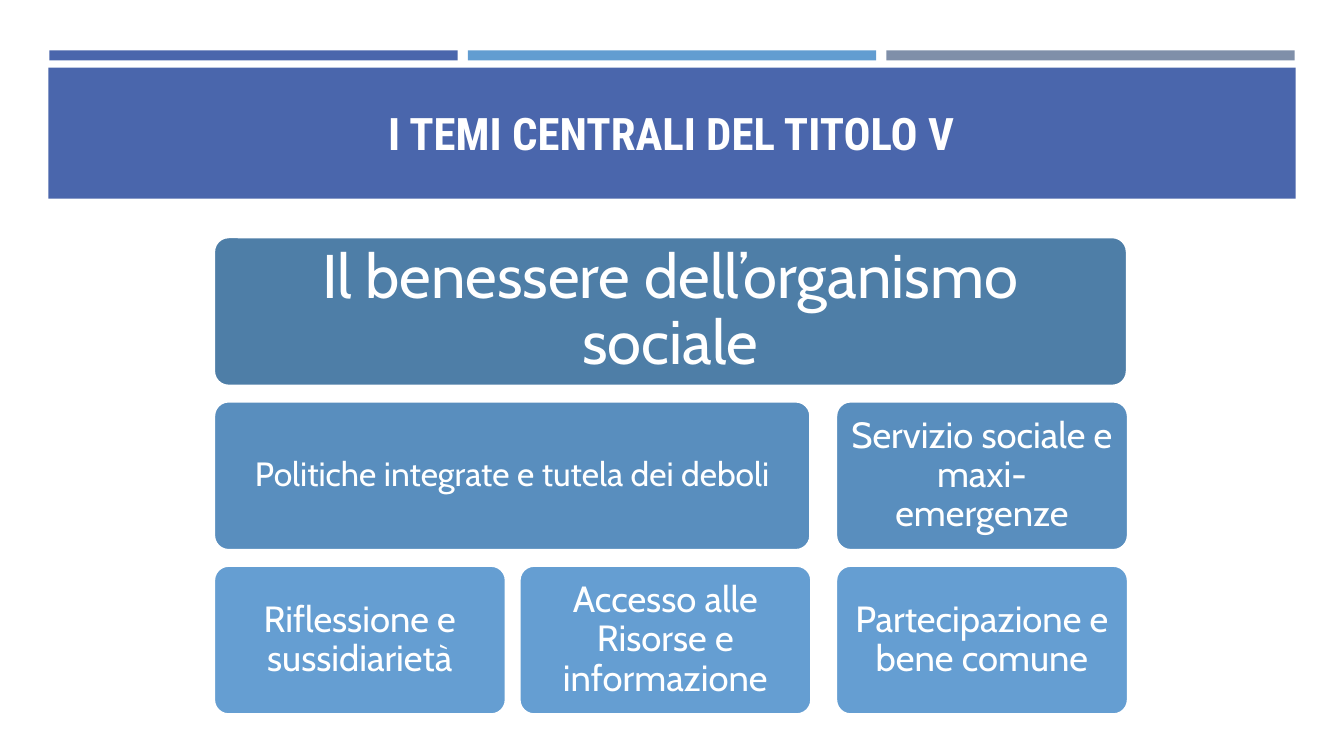
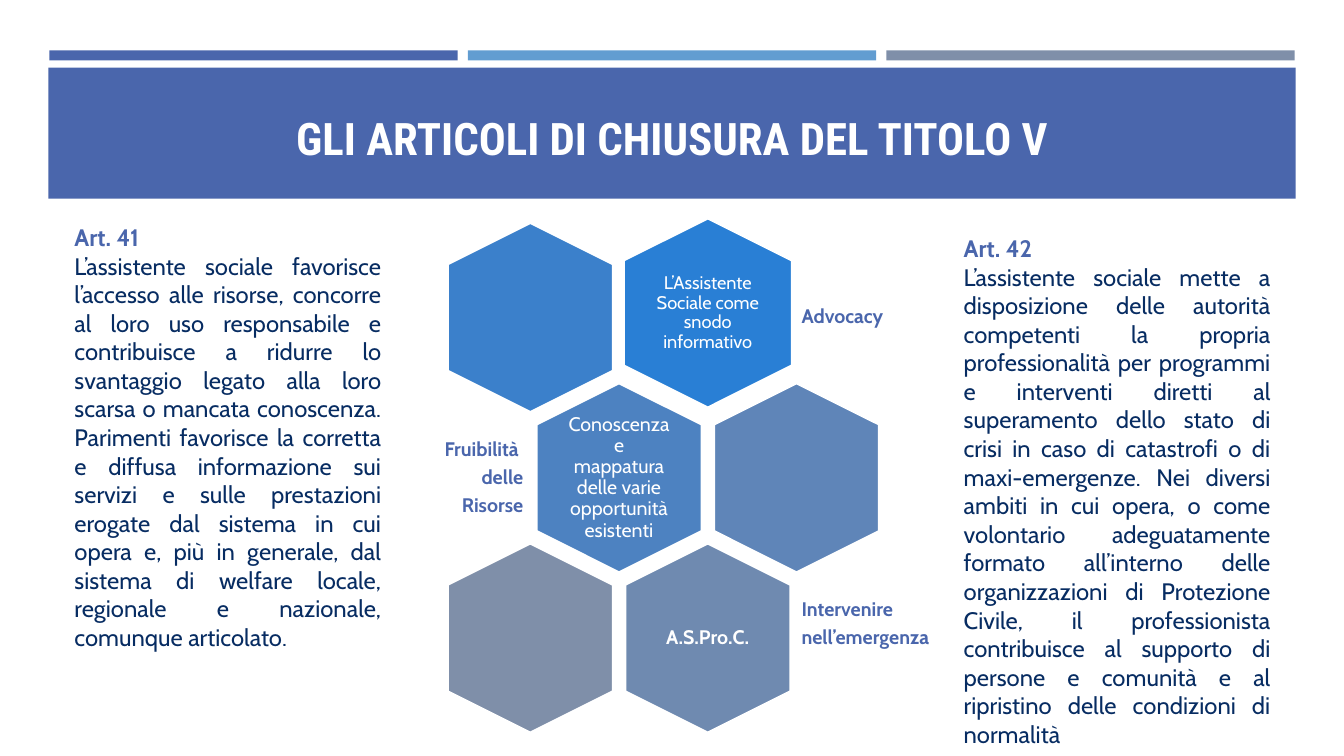
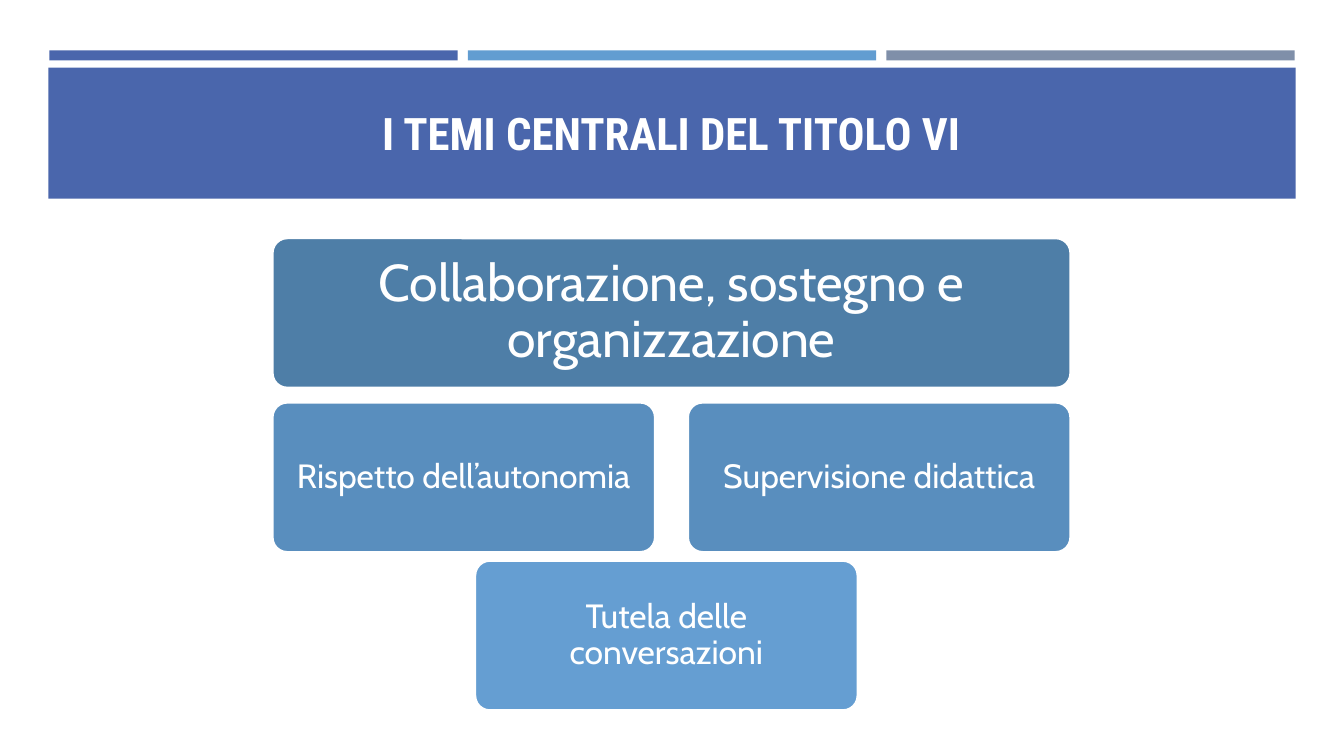
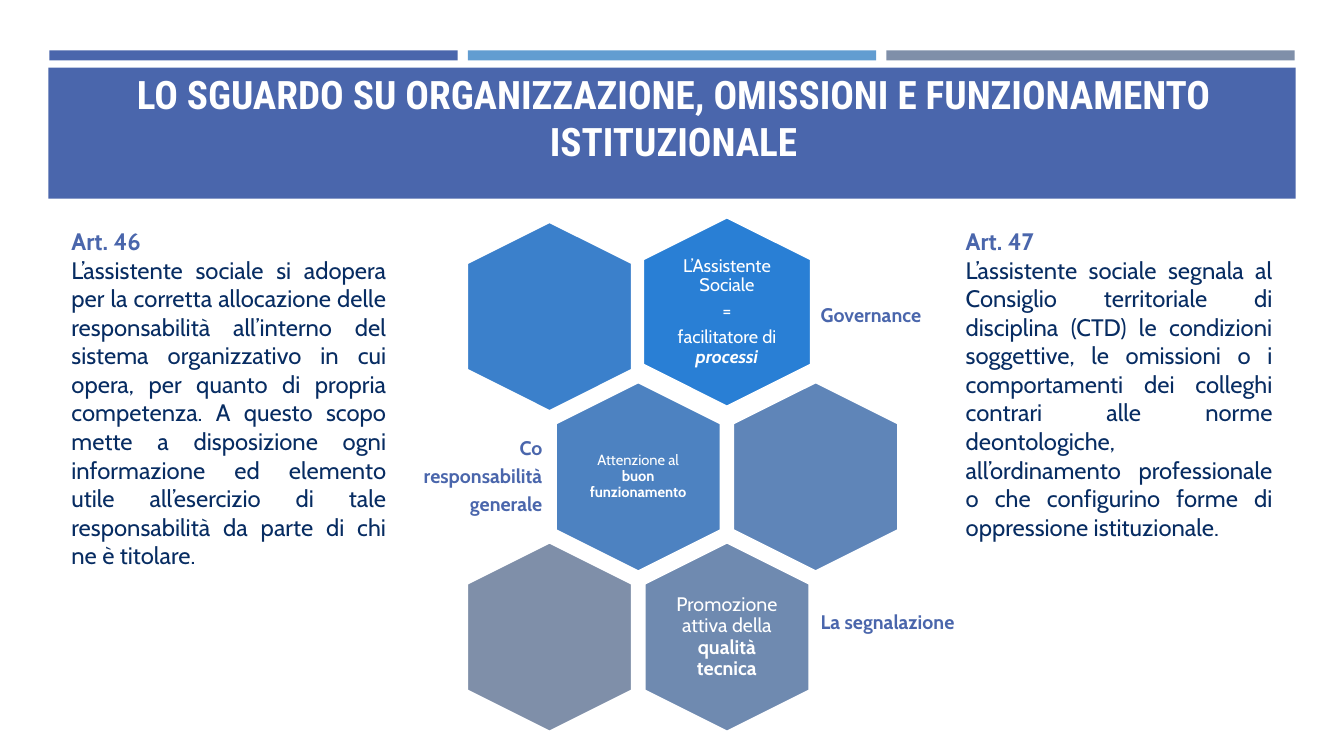
from pptx import Presentation
from pptx.dml.color import RGBColor
from pptx.enum.shapes import MSO_SHAPE
from pptx.enum.text import MSO_ANCHOR, MSO_AUTO_SIZE, PP_ALIGN
from pptx.util import Inches, Pt

RECTANGLE, ROUNDED, HEXAGON = MSO_SHAPE.RECTANGLE, MSO_SHAPE.ROUNDED_RECTANGLE, MSO_SHAPE.HEXAGON
LEFT, CENTER, RIGHT, JUSTIFY = PP_ALIGN.LEFT, PP_ALIGN.CENTER, PP_ALIGN.RIGHT, PP_ALIGN.JUSTIFY
TOP, MIDDLE, BOTTOM = MSO_ANCHOR.TOP, MSO_ANCHOR.MIDDLE, MSO_ANCHOR.BOTTOM
NO_AUTOFIT = MSO_AUTO_SIZE.NONE

WHITE = RGBColor(0xFF, 0xFF, 0xFF)
INDIGO = RGBColor(0x4A, 0x66, 0xAC)
SKY = RGBColor(0x62, 0x9D, 0xD1)
SLATE = RGBColor(0x7F, 0x8F, 0xA9)
NAVY = RGBColor(0x07, 0x2C, 0x62)
TILE_DARK = RGBColor(0x4E, 0x7E, 0xA7)
TILE_MEDIUM = RGBColor(0x59, 0x8E, 0xBE)
TILE_LIGHT = RGBColor(0x65, 0x9E, 0xD2)
HEXAGON_ACCENT = RGBColor(0x29, 0x7F, 0xD5)
HEXAGON_TOP = RGBColor(0x3B, 0x80, 0xCB)
HEXAGON_MIDDLE = RGBColor(0x4D, 0x82, 0xC1)
HEXAGON_SIDE = RGBColor(0x5F, 0x85, 0xB8)
HEXAGON_LOW = RGBColor(0x6F, 0x8A, 0xB0)

TITLE_FONT, BODY_FONT = "Roboto Condensed", "Cabin"
TITLE_ONLY_LAYOUT = 5
HEXAGON_LENGTH, HEXAGON_WIDTH, ACCENT_WIDTH = 1.88, 1.64, 1.67
COLUMN_STEP, ROW_STEP = 0.88, 1.59
CAPTION_HEIGHT = 1.13


class Deck:
    """Holds the style and the current slide, and adds each kind of element."""

    def __init__(self):
        self.presentation = Presentation()
        self.presentation.slide_width = Inches(13.33)
        self.presentation.slide_height = Inches(7.5)
        self.layout = self.presentation.slide_layouts[TITLE_ONLY_LAYOUT]
        self.slide = None

    def add_slide(self, title, left=0.63, top=0.86, width=12.06, height=0.77, size=32):
        self.slide = self.presentation.slides.add_slide(self.layout)
        if len(self.presentation.slides) == 1:
            self.add_bands()
        shape = self.slide.shapes.title
        shape.left, shape.top = Inches(left), Inches(top)
        shape.width, shape.height = Inches(width), Inches(height)
        frame = self.set_frame(shape, BOTTOM)
        self.add_paragraphs(frame, [title], size, WHITE, CENTER, bold=True, font=TITLE_FONT)

    def add_bands(self):
        for placeholder in list(self.layout.placeholders):
            if placeholder.placeholder_format.idx:
                self.layout.shapes.element.remove(placeholder.element)
        bands = [self.add_shape(RECTANGLE, 0.49 + 4.15 * column, 0.5, 4.05, 0.1, color)
                 for column, color in enumerate((INDIGO, SKY, SLATE))]
        bands.append(self.add_shape(RECTANGLE, 0.48, 0.67, 12.37, 1.3, INDIGO))
        for band in bands:
            self.layout.shapes.element.append(band.element)

    def add_shape(self, kind, left, top, width, height, fill, line_width=None):
        shape = self.slide.shapes.add_shape(
            kind, Inches(left), Inches(top), Inches(width), Inches(height))
        shape.shadow.inherit = False
        shape.fill.solid()
        shape.fill.fore_color.rgb = fill
        if line_width:
            shape.line.color.rgb = WHITE
            shape.line.width = Pt(line_width)
        else:
            shape.line.fill.background()
        return shape

    def set_frame(self, shape, anchor, inset=None):
        frame = shape.text_frame
        frame.word_wrap = True
        frame.auto_size = NO_AUTOFIT
        frame.vertical_anchor = anchor
        if inset is not None:
            frame.margin_left = frame.margin_right = Inches(inset)
            frame.margin_top = frame.margin_bottom = Inches(inset)
        return frame

    def add_paragraphs(self, frame, paragraphs, size, color, alignment,
                       bold=False, font=BODY_FONT, compact=False):
        for index, runs in enumerate(paragraphs):
            paragraph = frame.add_paragraph() if index else frame.paragraphs[0]
            paragraph.alignment = alignment
            if compact:
                paragraph.line_spacing = 0.9
                paragraph.space_after = Pt(round(0.35 * size, 1))
            for item in [runs] if isinstance(runs, str) else runs:
                text, style = (item, {}) if isinstance(item, str) else item
                run = paragraph.add_run()
                run.text = text
                run.font.name = font
                run.font.size = Pt(size)
                run.font.bold = style.get("bold", bold)
                run.font.italic = style.get("italic", False)
                run.font.color.rgb = style.get("color", color)

    def add_text(self, left, top, width, height, anchor=TOP, inset=None):
        shape = self.slide.shapes.add_textbox(
            Inches(left), Inches(top), Inches(width), Inches(height))
        return self.set_frame(shape, anchor, inset)

    def add_article(self, left, top, width, height, heading, text):
        frame = self.add_text(left, top, width, height)
        paragraphs = [[(heading, {"bold": True, "color": INDIGO})], text]
        self.add_paragraphs(frame, paragraphs, 17, NAVY, JUSTIFY)

    def add_tile(self, left, top, width, height, fill, text, size):
        shape = self.add_shape(ROUNDED, left, top, width, height, fill, 2)
        shape.adjustments[0] = 0.1
        frame = self.set_frame(shape, MIDDLE, round(size / 240, 2))
        self.add_paragraphs(frame, [text], size, WHITE, CENTER, compact=True)

    def add_hexagon(self, left, top, fill, width=HEXAGON_WIDTH, paragraphs=(), size=14):
        shape = self.add_shape(HEXAGON, left, top, HEXAGON_LENGTH, width, fill, 1.75)
        shape.rotation = 90
        if paragraphs:
            text_width, text_height = width - 0.51, 1.29
            frame = self.add_text(
                left + (HEXAGON_LENGTH - text_width) / 2, top + (width - text_height) / 2,
                text_width, text_height, MIDDLE, 0.05 if size < 14 else 0.06)
            self.add_paragraphs(frame, paragraphs, size, WHITE, CENTER, compact=True)

    def add_caption(self, left, center, width, paragraphs, alignment):
        frame = self.add_text(
            left, center - CAPTION_HEIGHT / 2, width, CAPTION_HEIGHT, MIDDLE, 0.06)
        self.add_paragraphs(frame, paragraphs, 14, INDIGO, alignment, bold=True, compact=True)

    def add_honeycomb(self, left, top, labels, captions):
        columns = [left + COLUMN_STEP * index for index in range(4)]
        rows = [top + ROW_STEP * index for index in range(3)]
        centers = [row + HEXAGON_WIDTH / 2 for row in rows]
        accent, middle, low = labels
        self.add_hexagon(columns[2], rows[0] - 0.06, HEXAGON_ACCENT, ACCENT_WIDTH, *accent)
        self.add_hexagon(columns[0], rows[0], HEXAGON_TOP)
        self.add_hexagon(columns[1], rows[1], HEXAGON_MIDDLE, HEXAGON_WIDTH, *middle)
        self.add_hexagon(columns[3], rows[1], HEXAGON_SIDE)
        self.add_hexagon(columns[2], rows[2], HEXAGON_LOW, HEXAGON_WIDTH, *low)
        self.add_hexagon(columns[0], rows[2], SLATE)
        self.add_caption(left + 3.57, centers[0], 2.1, captions[0], LEFT)
        self.add_caption(left - 1.1, centers[1], 2.03, captions[1], RIGHT)
        self.add_caption(left + 3.57, centers[2] - 0.14, 2.1, captions[2], LEFT)


def add_welfare_themes(deck):
    deck.add_slide("I TEMI CENTRALI DEL TITOLO V")
    first, second, third = 2.12, 5.15, 8.29
    tiles = [
        (first, 0, 9.06, TILE_DARK, "Il benessere dell’organismo sociale", 44),
        (first, 1, 5.92, TILE_MEDIUM, "Politiche integrate e tutela dei deboli", 24),
        (third, 1, 2.9, TILE_MEDIUM, "Servizio sociale e maxi-emergenze", 26),
        (first, 2, 2.9, TILE_LIGHT, "Riflessione e sussidiarietà", 26),
        (second, 2, 2.9, TILE_LIGHT, "Accesso alle Risorse e informazione", 26),
        (third, 2, 2.9, TILE_LIGHT, "Partecipazione e bene comune", 26),
    ]
    for left, row, width, fill, text, size in tiles:
        deck.add_tile(left, 2.35 + 1.63 * row, width, 1.48, fill, text, size)


def add_closing_articles(deck):
    deck.add_slide("GLI ARTICOLI DI CHIUSURA DEL TITOLO V", 0.64, 0.95, 12.06, 0.73)
    deck.add_article(
        0.64, 2.16, 3.24, 4.39, "Art. 41",
        "L’assistente sociale favorisce l’accesso alle risorse, concorre al loro uso "
        "responsabile e contribuisce a ridurre lo svantaggio legato alla loro scarsa o "
        "mancata conoscenza. Parimenti favorisce la corretta e diffusa informazione sui "
        "servizi e sulle prestazioni erogate dal sistema in cui opera e, più in generale, "
        "dal sistema di welfare locale, regionale e nazionale, comunque articolato.")
    deck.add_article(
        9.46, 2.27, 3.24, 4.96, "Art. 42",
        "L’assistente sociale mette a disposizione delle autorità competenti la propria "
        "professionalità per programmi e interventi diretti al superamento dello stato di "
        "crisi in caso di catastrofi o di maxi-emergenze. Nei diversi ambiti in cui opera, "
        "o come volontario adeguatamente formato all’interno delle organizzazioni di "
        "Protezione Civile, il professionista contribuisce al supporto di persone e "
        "comunità e al ripristino delle condizioni di normalità")
    labels = [
        (["L’Assistente Sociale come snodo informativo"], 13),
        (["Conoscenza e mappatura delle varie opportunità esistenti"], 14),
        ([[("A.S.Pro.C.", {"bold": True})]], 14),
    ]
    captions = [["Advocacy"], ["Fruibilità ", "delle", "Risorse"],
                ["Intervenire", "nell’emergenza"]]
    deck.add_honeycomb(4.32, 2.33, labels, captions)


def add_organisation_themes(deck):
    deck.add_slide("I TEMI CENTRALI DEL TITOLO VI")
    tiles = [
        (2.7, 2.36, 7.92, TILE_DARK, "Collaborazione, sostegno e organizzazione", 37),
        (2.7, 3.99, 3.8, TILE_MEDIUM, "Rispetto dell’autonomia", 24),
        (6.82, 3.99, 3.8, TILE_MEDIUM, "Supervisione didattica", 24),
        (4.71, 5.56, 3.8, TILE_LIGHT, "Tutela delle conversazioni", 24),
    ]
    for left, top, width, fill, text, size in tiles:
        deck.add_tile(left, top, width, 1.49, fill, text, size)


def add_institutional_articles(deck):
    deck.add_slide("LO SGUARDO SU ORGANIZZAZIONE, OMISSIONI E FUNZIONAMENTO ISTITUZIONALE",
                   0.35, 0.95, 12.66, 0.73, 28)
    deck.add_article(
        0.61, 2.2, 3.32, 3.53, "Art. 46",
        "L’assistente sociale si adopera per la corretta allocazione delle responsabilità "
        "all’interno del sistema organizzativo in cui opera, per quanto di propria "
        "competenza. A questo scopo mette a disposizione ogni informazione ed elemento "
        "utile all’esercizio di tale responsabilità da parte di chi ne è titolare.")
    deck.add_article(
        9.48, 2.2, 3.24, 3.25, "Art. 47",
        "L’assistente sociale segnala al Consiglio territoriale di disciplina (CTD) le "
        "condizioni soggettive, le omissioni o i comportamenti dei colleghi contrari alle "
        "norme deontologiche, all’ordinamento professionale o che configurino forme di "
        "oppressione istituzionale.")
    labels = [
        (["L’Assistente Sociale", "=",
          ["facilitatore di ", ("processi", {"bold": True, "italic": True})]], 13),
        ([["Attenzione al ", ("buon funzionamento", {"bold": True})]], 10.5),
        ([["Promozione attiva della ", ("qualità tecnica", {"bold": True})]], 14),
    ]
    captions = [["Governance"], ["Co", "responsabilità", "generale"], ["La segnalazione"]]
    deck.add_honeycomb(4.51, 2.32, labels, captions)


def main():
    deck = Deck()
    add_welfare_themes(deck)
    add_closing_articles(deck)
    add_organisation_themes(deck)
    add_institutional_articles(deck)
    deck.presentation.save("out.pptx")


if __name__ == "__main__":
    main()
